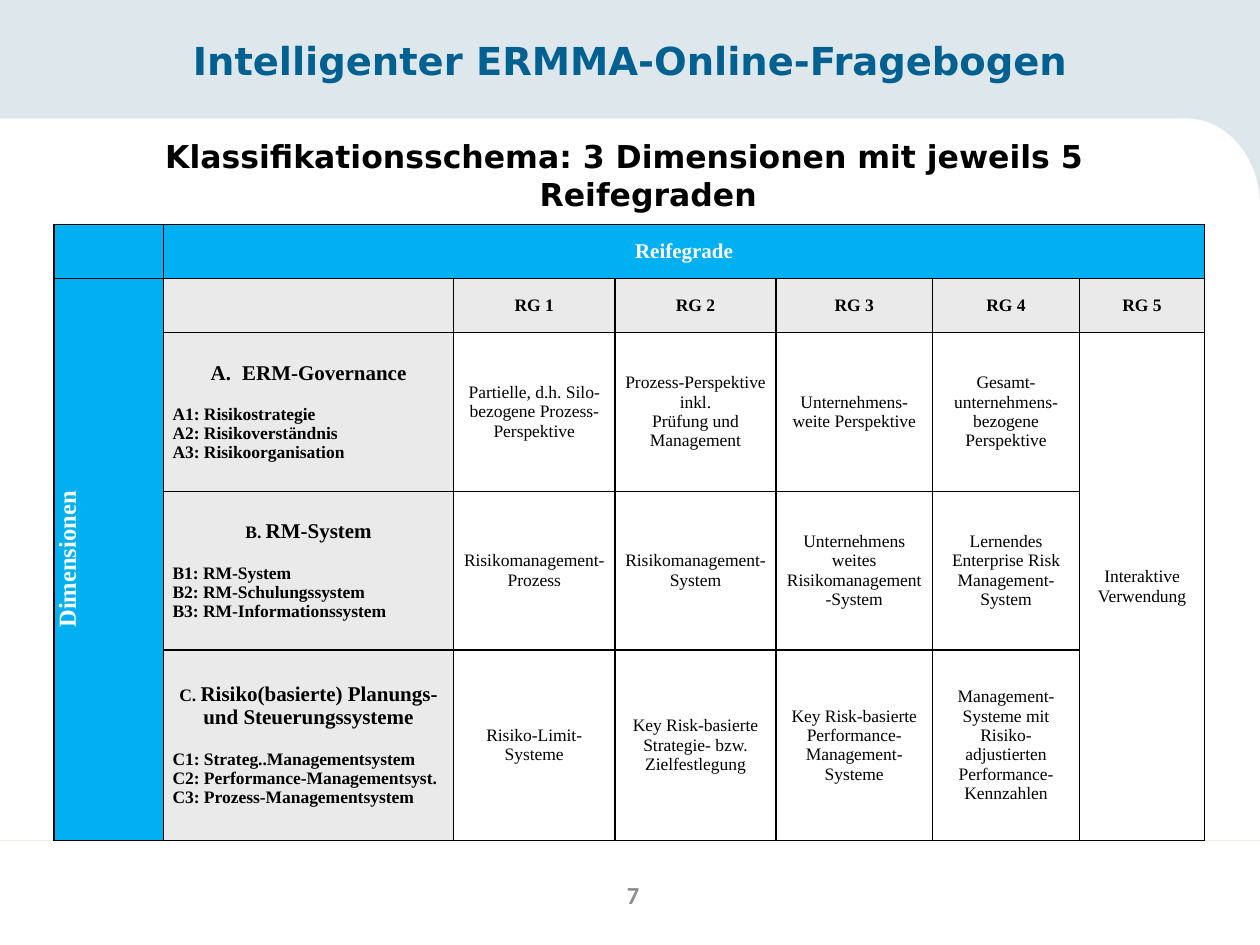
from dataclasses import dataclass
from lxml import etree
from pptx import Presentation
from pptx.dml.color import RGBColor
from pptx.enum.shapes import MSO_CONNECTOR, MSO_SHAPE
from pptx.enum.text import MSO_ANCHOR, MSO_AUTO_SIZE, PP_ALIGN
from pptx.oxml.ns import qn
from pptx.util import Inches, Pt

CENTER, LEFT = PP_ALIGN.CENTER, PP_ALIGN.LEFT
MIDDLE = MSO_ANCHOR.MIDDLE
RECTANGLE, OVAL = MSO_SHAPE.RECTANGLE, MSO_SHAPE.OVAL
STRAIGHT = MSO_CONNECTOR.STRAIGHT
NO_AUTOFIT = MSO_AUTO_SIZE.NONE


@dataclass(frozen=True)
class Theme:
    background: str = "DEE7EC"
    white: str = "FFFFFF"
    black: str = "000000"
    title: str = "006090"
    footer_line: str = "EEECE1"
    page_number: str = "8C8C8C"
    header: str = "00B0F0"
    label: str = "EAEAEA"
    heading_font: str = "DejaVu Sans"
    table_font: str = "Times New Roman"
    number_font: str = "Calibri"
    title_size: int = 22
    subtitle_size: int = 18
    axis_size: int = 14
    heading_size: int = 12
    cell_size: int = 10


THEME = Theme()

TITLE = "Intelligenter ERMMA-Online-Fragebogen"
SUBTITLE = "Klassifikationsschema: 3 Dimensionen mit jeweils 5 Reifegraden"
PAGE_NUMBER = "7"
GRADES_TITLE = "Reifegrade"
DIMENSIONS_TITLE = "Dimensionen"
GRADES = ["RG 1", "RG 2", "RG 3", "RG 4", "RG 5"]
TOP_GRADE = "Interaktive Verwendung"
DIMENSIONS = [
    {
        "prefix": "",
        "name": "ERM-Governance",
        "items": ["A1: Risikostrategie", "A2: Risikoverständnis", "A3: Risikoorganisation"],
        "grades": [
            ["Partielle, d.h. Silo-bezogene Prozess-Perspektive"],
            ["Prozess-Perspektive inkl.", "Prüfung und Management"],
            ["Unternehmens-", "weite Perspektive"],
            ["Gesamt-unternehmens-bezogene Perspektive"],
        ],
    },
    {
        "prefix": "B. ",
        "name": "RM-System",
        "items": ["B1: RM-System", "B2: RM-Schulungssystem", "B3: RM-Informationssystem"],
        "grades": [
            ["Risikomanagement-Prozess"],
            ["Risikomanagement-System"],
            ["Unternehmens", "weites Risikomanagement-System"],
            ["Lernendes Enterprise Risk Management-System"],
        ],
    },
    {
        "prefix": "C. ",
        "name": "Risiko(basierte) Planungs- und Steuerungssysteme",
        "items": ["C1: Strateg..Managementsystem", "C2: Performance-Managementsyst.",
                  "C3: Prozess-Managementsystem"],
        "grades": [
            ["Risiko-Limit-Systeme"],
            ["Key Risk-basierte Strategie- bzw. Zielfestlegung"],
            ["Key Risk-basierte Performance-Management-Systeme"],
            ["Management-Systeme mit Risiko-adjustierten Performance-Kennzahlen"],
        ],
    },
]
BACKDROP = [
    (RECTANGLE, 0, 0.94, 9.42, 6.56),
    (OVAL, 8.83, 0.94, 1.17, 1.39),
    (RECTANGLE, 5.66, 1.62, 4.34, 5.88),
]
COLUMN_WIDTHS = [0.87, 2.3, 1.28, 1.28, 1.24, 1.17, 0.99]
ROW_HEIGHTS = [0.43, 0.43, 1.26, 1.26, 1.51]


def color(value):
    return RGBColor.from_string(value)


def add_run(paragraph, text, size, font=THEME.table_font, fill=THEME.black, bold=True):
    run = paragraph.add_run()
    run.text = text
    run.font.name = font
    run.font.size = Pt(size)
    run.font.bold = bold
    run.font.color.rgb = color(fill)


def set_indent(paragraph, size, bullet):
    properties = paragraph._p.get_or_add_pPr()
    properties.set("marL", str(Inches(size)))
    properties.set("indent", str(-Inches(size)))
    element = etree.SubElement(properties, qn("a:" + bullet))
    if bullet == "buAutoNum":
        element.set("type", "alphaUcPeriod")


def next_paragraph(frame, alignment=CENTER):
    first = frame.paragraphs[0]
    paragraph = frame.add_paragraph() if first.runs else first
    paragraph.alignment = alignment
    return paragraph


def write_lines(cell, lines, size=THEME.cell_size, fill=THEME.black, bold=True):
    for line in lines:
        add_run(next_paragraph(cell.text_frame), line, size, fill=fill, bold=bold)


def write_dimension(cell, dimension):
    heading = next_paragraph(cell.text_frame)
    if dimension["prefix"]:
        add_run(heading, dimension["prefix"], THEME.cell_size)
    else:
        set_indent(heading, 0.25, "buAutoNum")
    add_run(heading, dimension["name"], THEME.heading_size)
    for index, item in enumerate(dimension["items"]):
        paragraph = next_paragraph(cell.text_frame, LEFT)
        paragraph.space_before = Pt(0 if index else 11.5)
        add_run(paragraph, item, THEME.cell_size)


def format_cell(cell, fill):
    properties = cell._tc.get_or_add_tcPr()
    for side in ("lnL", "lnR", "lnT", "lnB"):
        line = etree.SubElement(properties, qn("a:" + side), w=str(Pt(1)))
        solid = etree.SubElement(line, qn("a:solidFill"))
        etree.SubElement(solid, qn("a:srgbClr"), val=THEME.black)
    if fill:
        cell.fill.solid()
        cell.fill.fore_color.rgb = color(fill)
    else:
        cell.fill.background()
    cell.vertical_anchor = MIDDLE
    cell.margin_left = cell.margin_right = Inches(0.07)
    cell.margin_top = cell.margin_bottom = 0


def cell_fill(row, column):
    if row == 0 or column == 0:
        return THEME.header
    return THEME.label if row == 1 or column == 1 else None


def add_backdrop(slide):
    slide.background.fill.solid()
    slide.background.fill.fore_color.rgb = color(THEME.background)
    shapes = []
    for kind, *box in BACKDROP:
        shape = slide.shapes.add_shape(kind, *map(Inches, box))
        shape.shadow.inherit = False
        shape.fill.solid()
        shape.fill.fore_color.rgb = color(THEME.white)
        shape.line.fill.background()
        shapes.append(shape)
    line = slide.shapes.add_connector(STRAIGHT, 0, Inches(6.67), Inches(10), Inches(6.67))
    line.line.color.rgb = color(THEME.footer_line)
    line.line.width = Pt(0.75)
    etree.SubElement(line._element.spPr, qn("a:effectLst"))
    for position, shape in enumerate(shapes + [line], start=2):
        slide.shapes._spTree.insert(position, shape._element)


def write_box(shape, box, text, size, font, fill, indent=0):
    shape.left, shape.top, shape.width, shape.height = map(Inches, box)
    frame = shape.text_frame
    frame.word_wrap = True
    frame.auto_size = NO_AUTOFIT
    frame.vertical_anchor = MIDDLE
    paragraph = next_paragraph(frame)
    paragraph.space_before = Pt(0)
    if indent:
        set_indent(paragraph, indent, "buNone")
    add_run(paragraph, text, size, font, fill)


def add_matrix(slide):
    table = slide.shapes.add_table(
        len(ROW_HEIGHTS), len(COLUMN_WIDTHS), Inches(0.43), Inches(1.78),
        Inches(sum(COLUMN_WIDTHS)), Inches(sum(ROW_HEIGHTS))).table
    table.first_row = table.horz_banding = False
    for column, width in zip(table.columns, COLUMN_WIDTHS):
        column.width = Inches(width)
    for row, height in enumerate(ROW_HEIGHTS):
        table.rows[row].height = Inches(height)
        for column in range(len(COLUMN_WIDTHS)):
            format_cell(table.cell(row, column), cell_fill(row, column))
    for start, end in [((0, 1), (0, 6)), ((1, 0), (4, 0)), ((2, 6), (4, 6))]:
        table.cell(*start).merge(table.cell(*end))
    write_lines(table.cell(0, 1), [GRADES_TITLE], THEME.heading_size, THEME.white)
    axis = table.cell(1, 0)
    axis._tc.get_or_add_tcPr().set("vert", "vert270")
    write_lines(axis, [DIMENSIONS_TITLE], THEME.axis_size, THEME.white)
    for column, grade in enumerate(GRADES, start=2):
        write_lines(table.cell(1, column), [grade])
    for row, dimension in enumerate(DIMENSIONS, start=2):
        write_dimension(table.cell(row, 1), dimension)
        for column, lines in enumerate(dimension["grades"], start=2):
            write_lines(table.cell(row, column), lines, bold=False)
    write_lines(table.cell(2, 6), [TOP_GRADE], bold=False)


def main():
    presentation = Presentation()
    presentation.slide_width, presentation.slide_height = Inches(10), Inches(7.5)
    slide = presentation.slides.add_slide(presentation.slide_layouts[1])
    add_backdrop(slide)
    write_box(slide.shapes.title, (0.12, 0.21, 9.76, 0.54), TITLE,
              THEME.title_size, THEME.heading_font, THEME.title)
    write_box(slide.placeholders[1], (0.35, 1.15, 9.21, 0.47), SUBTITLE,
              THEME.subtitle_size, THEME.heading_font, THEME.black, 0.38)
    number_box = slide.shapes.add_textbox(0, 0, 0, 0)
    write_box(number_box, (4.61, 6.9, 0.83, 0.4), PAGE_NUMBER,
              THEME.axis_size, THEME.number_font, THEME.page_number)
    add_matrix(slide)
    presentation.save("out.pptx")


if __name__ == "__main__":
    main()
